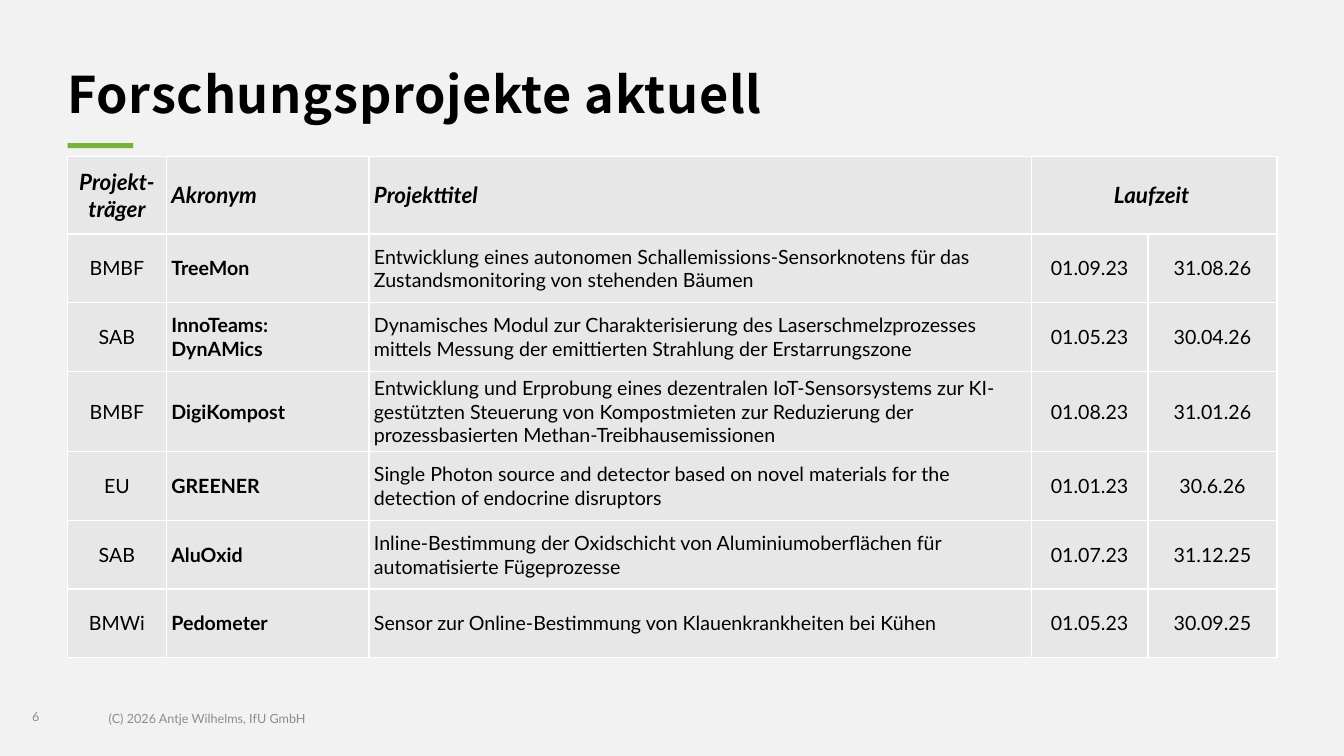
from typing import NamedTuple

import lxml.etree
import pptx
import pptx.dml.color
import pptx.enum.shapes
import pptx.enum.text
import pptx.oxml.ns
import pptx.util

Pt = pptx.util.Pt
RGBColor = pptx.dml.color.RGBColor
Align = pptx.enum.text.PP_ALIGN
Anchor = pptx.enum.text.MSO_ANCHOR

BLACK = RGBColor(0x00, 0x00, 0x00)
WHITE = RGBColor(0xFF, 0xFF, 0xFF)
BACKGROUND = RGBColor(0xF2, 0xF2, 0xF2)
CELL_GRAY = RGBColor(0xE7, 0xE7, 0xE7)
FOOTER_GRAY = RGBColor(0x8C, 0x8C, 0x8C)
GREEN = RGBColor(0x76, 0xB2, 0x39)

BODY_FONT = "Lato"
TITLE_FONT = "Noto Sans CJK JP"
LEFT = 48.24
CONTENT_WIDTH = 864
CELL_INSET = 3.6


class Column(NamedTuple):
    heading: str
    width: float
    align: Align
    bold: bool = False


class Project(NamedTuple):
    funder: str
    acronym: str
    title: str
    start: str
    end: str
    height: float = 48.96


class FooterText(NamedTuple):
    text: str
    left: float
    top: float
    width: float


COLUMNS = [
    Column("Projekt-träger", 70.56, Align.CENTER),
    Column("Akronym", 144.72, Align.LEFT, bold=True),
    Column("Projekttitel", 473.04, Align.LEFT),
    Column("Laufzeit ", 83.52, Align.CENTER),
    Column("", 92.16, Align.CENTER),
]
HEADER_HEIGHT = 55.6
PROJECTS = [
    Project("BMBF", "TreeMon",
            "Entwicklung eines autonomen Schallemissions-Sensorknotens für das "
            "Zustandsmonitoring von stehenden Bäumen", "01.09.23", "31.08.26"),
    Project("SAB", "InnoTeams: DynAMics",
            "Dynamisches Modul zur Charakterisierung des Laserschmelzprozesses "
            "mittels Messung der emittierten Strahlung der Erstarrungszone",
            "01.05.23", "30.04.26"),
    Project("BMBF", "DigiKompost",
            "Entwicklung und Erprobung eines dezentralen IoT-Sensorsystems zur "
            "KI-gestützten Steuerung von Kompostmieten zur Reduzierung der "
            "prozessbasierten Methan-Treibhausemissionen",
            "01.08.23", "31.01.26", height=55.6),
    Project("EU", "GREENER",
            "Single Photon source and detector based on novel materials for the "
            "detection of endocrine disruptors", "01.01.23", "30.6.26"),
    Project("SAB", "AluOxid",
            "Inline-Bestimmung der Oxidschicht von Aluminiumoberflächen für "
            "automatisierte Fügeprozesse", "01.07.23", "31.12.25"),
    Project("BMWi", "Pedometer",
            "Sensor zur Online-Bestimmung von Klauenkrankheiten bei Kühen",
            "01.05.23", "30.09.25"),
]
FOOTERS = [
    FooterText("6", 15.84, 502.56, 46.8),
    FooterText("(C) 2026 Antje Wilhelms, IfU GmbH", 70.56, 504, 425.52),
]


def write_text(text_frame, text: str, *, size: float, color: RGBColor = BLACK,
               font_name: str = BODY_FONT, bold: bool = False, italic: bool = False,
               align: Align = Align.LEFT, spacing: float = 0) -> None:
    paragraph = text_frame.paragraphs[0]
    paragraph.alignment = align
    run = paragraph.add_run()
    run.text = text
    run.font.size = Pt(size)
    run.font.name = font_name
    run.font.bold = bold
    run.font.italic = italic
    run.font.color.rgb = color
    properties = run.font._element
    if spacing:
        properties.set("spc", str(round(spacing * 100)))
    east_asian = lxml.etree.Element(pptx.oxml.ns.qn("a:ea"), typeface=font_name)
    properties.find(pptx.oxml.ns.qn("a:latin")).addnext(east_asian)


def format_cell(cell) -> None:
    cell.vertical_anchor = Anchor.MIDDLE
    cell.margin_left = cell.margin_right = Pt(CELL_INSET)
    cell.margin_top = cell.margin_bottom = Pt(CELL_INSET)
    cell.fill.solid()
    cell.fill.fore_color.rgb = CELL_GRAY
    # Borders come before the fill in the cell properties
    properties = cell._tc.get_or_add_tcPr()
    for position, side in enumerate(("lnL", "lnR", "lnT", "lnB")):
        border = lxml.etree.Element(pptx.oxml.ns.qn(f"a:{side}"), w=str(Pt(1)))
        fill = lxml.etree.SubElement(border, pptx.oxml.ns.qn("a:solidFill"))
        lxml.etree.SubElement(fill, pptx.oxml.ns.qn("a:srgbClr"), val=str(WHITE))
        properties.insert(position, border)


def add_title(slide) -> None:
    title = slide.shapes.title
    title.left, title.top = Pt(LEFT), Pt(21.6)
    title.width, title.height = Pt(CONTENT_WIDTH), Pt(90)
    text_frame = title.text_frame
    text_frame.word_wrap = True
    text_frame.auto_size = pptx.enum.text.MSO_AUTO_SIZE.NONE
    text_frame.vertical_anchor = Anchor.MIDDLE
    text_frame.margin_left = 0
    write_text(text_frame, "Forschungsprojekte aktuell", size=36,
               font_name=TITLE_FONT, bold=True, spacing=0.5)


def add_accent_bar(slide) -> None:
    bar = slide.shapes.add_shape(pptx.enum.shapes.MSO_SHAPE.RECTANGLE,
                                 Pt(LEFT), Pt(102.24), Pt(46.8), Pt(3.6))
    bar.shadow.inherit = False
    bar.fill.solid()
    bar.fill.fore_color.rgb = GREEN
    bar.line.fill.background()


def add_project_table(slide) -> None:
    heights = [HEADER_HEIGHT] + [project.height for project in PROJECTS]
    frame = slide.shapes.add_table(len(heights), len(COLUMNS), Pt(LEFT), Pt(111.6),
                                   Pt(CONTENT_WIDTH), Pt(sum(heights)))
    table = frame.table
    table.horz_banding = False
    for row, height in zip(table.rows, heights):
        row.height = Pt(height)
    for cell in table.iter_cells():
        format_cell(cell)
    for index, column in enumerate(COLUMNS):
        table.columns[index].width = Pt(column.width)
        if column.heading:
            write_text(table.cell(0, index).text_frame, column.heading, size=16,
                       bold=True, italic=True, align=column.align)
        for row_index, project in enumerate(PROJECTS, start=1):
            write_text(table.cell(row_index, index).text_frame, project[index],
                       size=14, bold=column.bold, align=column.align)
    table.cell(0, 3).merge(table.cell(0, 4))


def add_footer(slide, footer: FooterText) -> None:
    box = slide.shapes.add_textbox(Pt(footer.left), Pt(footer.top),
                                   Pt(footer.width), Pt(28.8))
    box.text_frame.word_wrap = True
    write_text(box.text_frame, footer.text, size=9, color=FOOTER_GRAY)


def main() -> None:
    presentation = pptx.Presentation()
    presentation.slide_width, presentation.slide_height = Pt(960), Pt(540)
    slide = presentation.slides.add_slide(presentation.slide_layouts[5])
    slide.background.fill.solid()
    slide.background.fill.fore_color.rgb = BACKGROUND

    # Heading
    add_title(slide)
    add_accent_bar(slide)
    # Projects
    add_project_table(slide)
    # Footer
    for footer in FOOTERS:
        add_footer(slide, footer)

    presentation.save("out.pptx")


if __name__ == "__main__":
    main()
